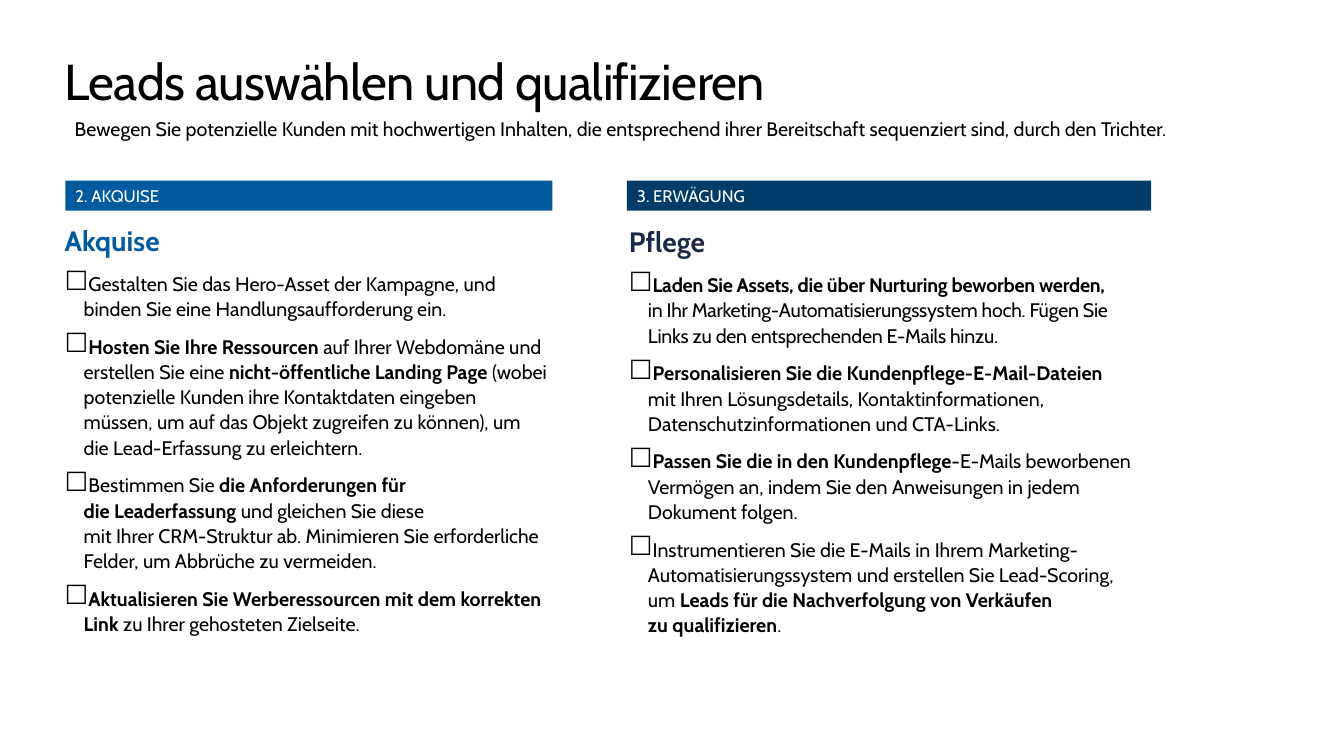
from copy import deepcopy

from lxml import etree
from pptx import Presentation
from pptx.dml.color import RGBColor
from pptx.enum.shapes import MSO_SHAPE
from pptx.enum.text import MSO_ANCHOR, PP_ALIGN
from pptx.oxml.ns import qn
from pptx.util import Cm, Pt

RECTANGLE = MSO_SHAPE.RECTANGLE
TOP, MIDDLE = MSO_ANCHOR.TOP, MSO_ANCHOR.MIDDLE
LEFT = PP_ALIGN.LEFT

BLACK = RGBColor(0x00, 0x00, 0x00)
WHITE = RGBColor(0xFF, 0xFF, 0xFF)
BLUE = RGBColor(0x00, 0x5A, 0x9F)
NAVY = RGBColor(0x00, 0x3C, 0x6A)
INK = RGBColor(0x1B, 0x2B, 0x46)

FONT = "Cabin"
BOLD_MARK = "*"

TITLE = "Leads auswählen und qualifizieren"
SUBTITLE = (
    "Bewegen Sie potenzielle Kunden mit hochwertigen Inhalten, die entsprechend "
    "ihrer Bereitschaft sequenziert sind, durch den Trichter."
)
STAGES = [
    {
        "banner": "2. AKQUISE",
        "banner_color": BLUE,
        "banner_box": (1.65, 4.55, 12.27, 0.76),
        "heading": "Akquise",
        "heading_color": BLUE,
        "list_box": (1.63, 5.69, 12.47, 10.36),
        "tasks": [
            ("Gestalten Sie das Hero-Asset der Kampagne, und binden Sie eine "
             "Handlungsaufforderung ein.", 0),
            ("*Hosten Sie Ihre Ressourcen *auf Ihrer Webdomäne und erstellen Sie eine "
             "*nicht-öffentliche Landing Page *(wobei potenzielle Kunden ihre "
             "Kontaktdaten eingeben müssen, um auf das Objekt zugreifen zu können), "
             "um die Lead-Erfassung zu erleichtern.", 0),
            ("Bestimmen Sie *die Anforderungen für \ndie Leaderfassung *und gleichen "
             "Sie diese \nmit Ihrer CRM-Struktur ab. Minimieren Sie erforderliche "
             "Felder, um Abbrüche zu vermeiden.", 0),
            ("*Aktualisieren Sie Werberessourcen mit dem korrekten Link *zu Ihrer "
             "gehosteten Zielseite.", 0),
        ],
    },
    {
        "banner": "3. ERWÄGUNG",
        "banner_color": NAVY,
        "banner_box": (15.8, 4.55, 13.21, 0.76),
        "heading": "Pflege",
        "heading_color": INK,
        "list_box": (15.85, 5.72, 13.84, 10.36),
        "tasks": [
            ("*Laden Sie Assets, die über Nurturing beworben werden, \n*in Ihr "
             "Marketing-Automatisierungssystem hoch. Fügen Sie \nLinks zu den "
             "entsprechenden E-Mails hinzu.", -0.2),
            ("*Personalisieren Sie die Kundenpflege-E-Mail-Dateien \n*mit Ihren "
             "Lösungsdetails, Kontaktinformationen, Datenschutzinformationen und "
             "CTA-Links.", 0),
            ("*Passen Sie die in den Kundenpflege-*E-Mails beworbenen Vermögen an, "
             "indem Sie den Anweisungen in jedem Dokument folgen.", 0),
            ("Instrumentieren Sie die E-Mails in Ihrem Marketing-"
             "Automatisierungssystem und erstellen Sie Lead-Scoring, \num *Leads für "
             "die Nachverfolgung von Verkäufen \nzu qualifizieren*.", 0),
        ],
    },
]

TITLE_BOX = (1.63, 1.27, 30.61, 1.55)
SUBTITLE_BOX = (1.63, 2.82, 29.44, 0.86)
NO_INSETS = (0, 0, 0, 0)
LIST_INSETS = (0, 0, 0.25, 0)
PADDED = (0.25, 0.13, 0.25, 0.13)
HANG = Cm(0.48)
HEADING_SPACING = {"line_spacing": 0.95, "space_after": Pt(9)}
TASK_SPACING = {"line_spacing": 1.07, "space_after": Pt(9)}


def apply(target, formats):
    for attribute, value in formats.items():
        setattr(target, attribute, value)


def prepare_frame(frame, insets, anchor=TOP):
    sides = ("margin_left", "margin_top", "margin_right", "margin_bottom")
    apply(frame, dict(zip(sides, map(Cm, insets))))
    apply(frame, {"word_wrap": True, "vertical_anchor": anchor})
    return frame


def write(paragraph, text, size, color, bold=False, tracking=0):
    paragraph.alignment = LEFT
    for part, piece in enumerate(text.split(BOLD_MARK)):
        for row, words in enumerate(piece.split("\n")):
            line_break = paragraph._p.add_br() if row else None
            run = paragraph.add_run()
            run.text = words
            apply(run.font, {"name": FONT, "size": Pt(size), "bold": bold or part % 2 == 1})
            run.font.color.rgb = color
            properties = run._r.get_or_add_rPr()
            if tracking:
                properties.set("spc", str(round(tracking * 100)))
            if line_break is not None:
                line_break.append(deepcopy(properties))
            if not words:
                paragraph._p.remove(run._r)


def add_checkbox(paragraph):
    properties = paragraph._p.get_or_add_pPr()
    properties.set("marL", str(HANG))
    properties.set("indent", str(-HANG))
    etree.SubElement(properties, qn("a:buSzPct"), val="135000")
    etree.SubElement(properties, qn("a:buChar"), char="☐")


def add_text(slide, box, insets):
    return prepare_frame(slide.shapes.add_textbox(*map(Cm, box)).text_frame, insets)


def add_banner(slide, stage):
    banner = slide.shapes.add_shape(RECTANGLE, *map(Cm, stage["banner_box"]))
    banner.shadow.inherit = False
    banner.fill.solid()
    banner.fill.fore_color.rgb = stage["banner_color"]
    banner.line.fill.background()
    label = prepare_frame(banner.text_frame, PADDED, MIDDLE)
    write(label.paragraphs[0], stage["banner"], 12, WHITE)


def add_checklist(slide, stage):
    checklist = add_text(slide, stage["list_box"], LIST_INSETS)
    heading = checklist.paragraphs[0]
    write(heading, stage["heading"], 20, stage["heading_color"], bold=True)
    apply(heading, HEADING_SPACING)
    for text, tracking in stage["tasks"]:
        task = checklist.add_paragraph()
        add_checkbox(task)
        write(task, text, 14, BLACK, tracking=tracking)
        apply(task, TASK_SPACING)


def main():
    deck = Presentation()
    apply(deck, {"slide_width": Cm(33.87), "slide_height": Cm(19.05)})
    slide = deck.slides.add_slide(deck.slide_layouts[6])
    title = add_text(slide, TITLE_BOX, NO_INSETS)
    write(title.paragraphs[0], TITLE, 36, BLACK, tracking=-0.5)
    subtitle = add_text(slide, SUBTITLE_BOX, PADDED)
    write(subtitle.paragraphs[0], SUBTITLE, 14, BLACK)
    for stage in STAGES:
        add_banner(slide, stage)
        add_checklist(slide, stage)
    deck.save("out.pptx")


if __name__ == "__main__":
    main()
